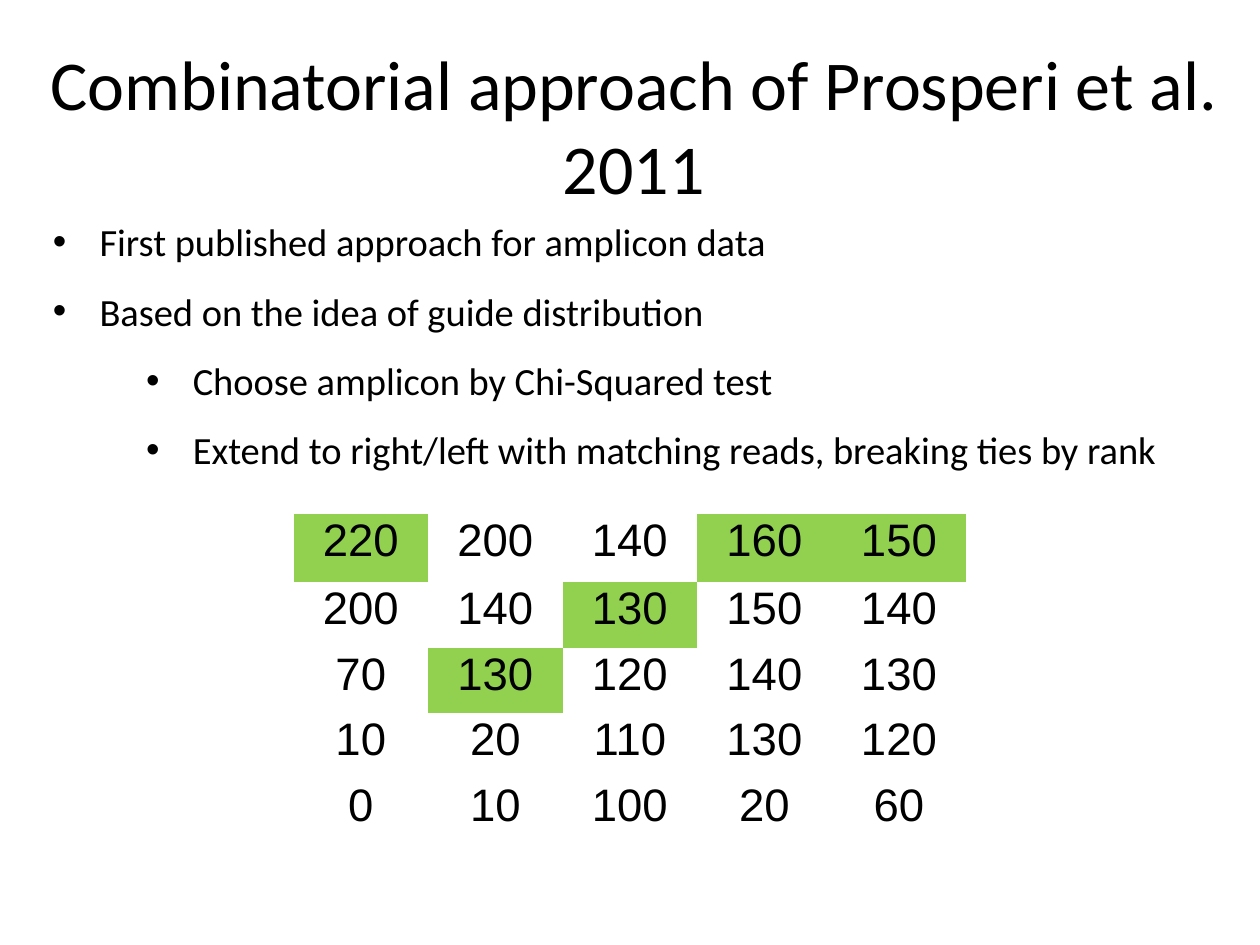
from dataclasses import dataclass

from lxml.etree import SubElement
from pptx import Presentation
from pptx.dml.color import RGBColor
from pptx.enum.text import MSO_ANCHOR as Anchor, PP_ALIGN as Align
from pptx.oxml.ns import qn
from pptx.util import Inches, Pt

# Content
TITLE = "Combinatorial approach of Prosperi et al. 2011"
BULLETS = [  # (level, text)
    (0, "First published approach for amplicon data"),
    (0, "Based on the idea of guide distribution"),
    (1, "Choose amplicon by Chi-Squared test"),
    (1, "Extend to right/left with matching reads, breaking ties by rank"),
]
READ_COUNTS = [
    (220, 200, 140, 160, 150),
    (200, 140, 130, 150, 140),
    (70, 130, 120, 140, 130),
    (10, 20, 110, 130, 120),
    (0, 10, 100, 20, 60),
]
CHOSEN_ROWS = (0, 2, 1, 0, 0)  # row of the matching read in each column


@dataclass(frozen=True)
class Theme:
    text: RGBColor = RGBColor(0, 0, 0)
    plain: RGBColor = RGBColor(255, 255, 255)
    chosen: RGBColor = RGBColor.from_string("92D050")
    text_font: str = "Calibri"
    table_font: str = "Arial"
    title_size: int = 40
    bullet_size: int = 22
    table_size: int = 26


THEME = Theme()

# Layout in inches
TITLE_BOX = (-0.06, 0.27, 10.18, 1.44)
BULLET_BOX = (0.42, 1.55, 9.42, 2.5)
TABLE_LEFT, TABLE_TOP, TABLE_WIDTH = 2.33, 4.08, 5.34
ROW_HEIGHTS = (0.54, 0.52, 0.52, 0.52, 0.53)
HANGING, LEVEL_STEP = 0.37, 0.74


def set_margins(target, left, top, right, bottom):
    target.margin_left, target.margin_top = Inches(left), Inches(top)
    target.margin_right, target.margin_bottom = Inches(right), Inches(bottom)


def prepare_frame(shape, margins):
    frame = shape.text_frame
    frame.word_wrap = True
    frame.vertical_anchor = Anchor.TOP
    set_margins(frame, *margins)
    return frame


def write(paragraph, text, font_name, size, align=Align.LEFT, spacing=None):
    paragraph.alignment = align
    paragraph.line_spacing = spacing
    run = paragraph.add_run()
    run.text = str(text)
    run.font.name = font_name
    run.font.size = Pt(size)
    run.font.color.rgb = THEME.text


def add_bullet(paragraph, level):
    paragraph.level = level
    properties = paragraph._p.get_or_add_pPr()
    properties.set("marL", str(Inches(HANGING + level * LEVEL_STEP)))
    properties.set("indent", str(-Inches(HANGING)))
    SubElement(properties, qn("a:buFont"), typeface="Arial")
    SubElement(properties, qn("a:buChar"), char="•")


def add_bullets(slide):
    # Unfilled outline that holds the list
    left, top, width, height = map(Inches, BULLET_BOX)
    right, bottom = left + width, top + height
    builder = slide.shapes.build_freeform(left, top)
    builder.add_line_segments([(right, top), (right, bottom), (left, bottom)])
    shape = builder.convert_to_shape()
    shape.shadow.inherit = False
    shape.fill.background()
    shape.line.fill.background()

    frame = prepare_frame(shape, (0, 0, 0, 0))
    for index, (level, text) in enumerate(BULLETS):
        paragraph = frame.add_paragraph() if index else frame.paragraphs[0]
        write(paragraph, text, THEME.text_font, THEME.bullet_size, spacing=1.5)
        add_bullet(paragraph, level)


def add_read_table(slide):
    rows, columns = len(READ_COUNTS), len(CHOSEN_ROWS)
    table = slide.shapes.add_table(
        rows, columns, Inches(TABLE_LEFT), Inches(TABLE_TOP),
        Inches(TABLE_WIDTH), Inches(sum(ROW_HEIGHTS))).table
    table.first_row = table.horz_banding = False
    # "No Style, No Grid" keeps the cells free of borders
    style = table._tbl.tblPr.find(qn("a:tableStyleId"))
    style.text = "{2D5ABB26-0587-4C30-8999-92F81FD0307C}"
    for column in table.columns:
        column.width = Inches(TABLE_WIDTH / columns)
    for row_index, counts in enumerate(READ_COUNTS):
        table.rows[row_index].height = Inches(ROW_HEIGHTS[row_index])
        for column_index, count in enumerate(counts):
            cell = table.cell(row_index, column_index)
            chosen = CHOSEN_ROWS[column_index] == row_index
            cell.fill.solid()
            cell.fill.fore_color.rgb = THEME.chosen if chosen else THEME.plain
            set_margins(cell, 0.02, 0.04, 0.02, 0)
            write(cell.text_frame.paragraphs[0], count, THEME.table_font,
                  THEME.table_size, Align.CENTER, 0.93)


def add_title(slide):
    shape = slide.shapes.add_textbox(*map(Inches, TITLE_BOX))
    frame = prepare_frame(shape, (0.09, 0.05, 0.09, 0.05))
    write(frame.paragraphs[0], TITLE, THEME.text_font, THEME.title_size, Align.CENTER)


def main():
    presentation = Presentation()
    presentation.slide_width, presentation.slide_height = Inches(10), Inches(7.5)
    slide = presentation.slides.add_slide(presentation.slide_layouts[6])

    add_bullets(slide)
    add_read_table(slide)
    add_title(slide)

    presentation.save("out.pptx")


if __name__ == "__main__":
    main()
